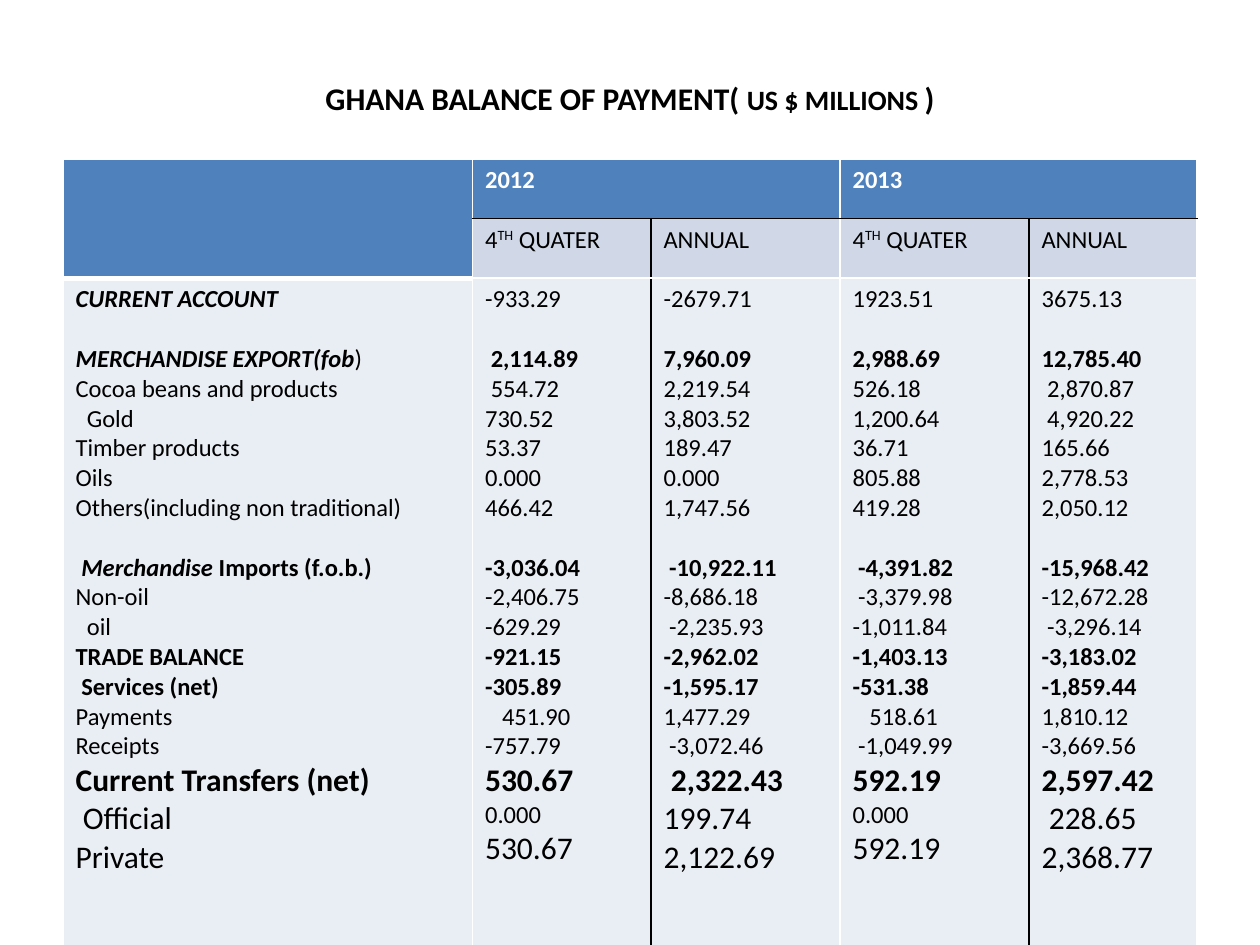
import dataclasses

import pptx
import pptx.dml.color
import pptx.enum.text
import pptx.oxml
import pptx.oxml.ns
import pptx.util

Pt = pptx.util.Pt


@dataclasses.dataclass(frozen=True)
class Theme:
    font: str = "Calibri"
    title_size: int = 18
    unit_size: int = 16
    body_size: int = 14
    large_size: int = 18
    space_width: float = 0.23  # width of one space, in ems
    group_gap: int = 17
    black: str = "000000"
    white: str = "FFFFFF"
    header: str = "4F81BD"
    subheader: str = "D0D8E8"
    body: str = "E9EDF4"


THEME = Theme()
BODY, LARGE = THEME.body_size, THEME.large_size


@dataclasses.dataclass(frozen=True)
class Entry:
    """One line in a body column; indent counts spaces."""
    text: str
    indent: int = 0


@dataclasses.dataclass(frozen=True)
class Account:
    """One account: its label, its four figures and their format."""
    label: object
    figures: tuple
    bold: bool = False
    sizes: tuple = (BODY,) * 5
    starts_group: bool = False
    italic_part: str = ""
    plain_part: str = ""
    label_bold: bool = False


def indented(text, indent=1):
    return Entry(text, indent)


ALL_LARGE = (LARGE,) * 5

ACCOUNTS = [
    Account("", ("-933.29", "-2679.71", "1923.51", "3675.13"),
            italic_part="CURRENT ACCOUNT", label_bold=True),
    Account("", (indented("2,114.89"), "7,960.09", "2,988.69", "12,785.40"),
            bold=True, starts_group=True,
            italic_part="MERCHANDISE EXPORT(fob", plain_part=")"),
    Account("Cocoa beans and products",
            (indented("554.72"), "2,219.54", "526.18", indented("2,870.87"))),
    Account(indented("Gold", 2),
            ("730.52", "3,803.52", "1,200.64", indented("4,920.22"))),
    Account("Timber products", ("53.37", "189.47", "36.71", "165.66")),
    Account("Oils", ("0.000", "0.000", "805.88", "2,778.53")),
    Account("Others(including non traditional)",
            ("466.42", "1,747.56", "419.28", "2,050.12")),
    Account(indented(" Imports (f.o.b.)"),
            ("-3,036.04", indented("-10,922.11"), indented("-4,391.82"), "-15,968.42"),
            bold=True, starts_group=True, italic_part="Merchandise"),
    Account("Non-oil",
            ("-2,406.75", "-8,686.18", indented("-3,379.98"), "-12,672.28")),
    Account(indented("oil", 2),
            ("-629.29", indented("-2,235.93"), "-1,011.84", indented("-3,296.14"))),
    Account("TRADE BALANCE",
            ("-921.15", "-2,962.02", "-1,403.13", "-3,183.02"), bold=True),
    Account(indented("Services (net)"),
            ("-305.89", "-1,595.17", "-531.38", "-1,859.44"), bold=True),
    Account("Payments",
            (indented("451.90", 3), "1,477.29", indented("518.61", 3), "1,810.12")),
    Account("Receipts",
            ("-757.79", indented("-3,072.46"), indented("-1,049.99"), "-3,669.56")),
    Account("Current Transfers (net)",
            ("530.67", indented("2,322.43"), "592.19", "2,597.42"),
            bold=True, sizes=ALL_LARGE),
    Account(indented("Official"), ("0.000", "199.74", "0.000", indented("228.65")),
            sizes=(LARGE, BODY, LARGE, BODY, LARGE)),
    Account("Private", ("530.67", "2,122.69", "592.19", "2,368.77"),
            sizes=ALL_LARGE),
]


def add_text(paragraph, text, size=BODY, color=THEME.black, bold=False,
             italic=False, superscript=False):
    run = paragraph.add_run()
    run.text = text
    font = run.font
    font.name, font.size, font.bold, font.italic = THEME.font, Pt(size), bold, italic
    font.color.rgb = pptx.dml.color.RGBColor.from_string(color)
    if superscript:
        run._r.get_or_add_rPr().set("baseline", "30000")


def set_border(cell, side, color, width=1):
    """Draw one cell edge; side is L, R, T or B."""
    line = pptx.oxml.parse_xml(
        f'<a:ln{side} {pptx.oxml.ns.nsdecls("a")} w="{Pt(width)}">'
        f'<a:solidFill><a:srgbClr val="{color}"/></a:solidFill></a:ln{side}>')
    properties = cell._tc.get_or_add_tcPr()
    position = sum(child.tag.split("}")[1].startswith("ln") for child in properties)
    properties.insert(position, line)


def add_title(slide):
    title = slide.shapes.title
    title.left, title.top, title.width, title.height = Pt(36), Pt(21.6), Pt(648), Pt(90)
    frame = title.text_frame
    frame.vertical_anchor = pptx.enum.text.MSO_ANCHOR.MIDDLE
    frame.margin_bottom = Pt(25)
    paragraph = frame.paragraphs[0]
    paragraph.alignment = pptx.enum.text.PP_ALIGN.CENTER
    add_text(paragraph, "GHANA BALANCE OF PAYMENT( ", size=THEME.title_size, bold=True)
    add_text(paragraph, "US $ MILLIONS ", size=THEME.unit_size, bold=True)
    add_text(paragraph, ")", size=THEME.title_size, bold=True)


def style_cells(table):
    """Fill the cells; black lines part quarter from annual and underline years."""
    for row in range(3):
        for column in range(5):
            cell = table.cell(row, column)
            is_header = row == 0 or (row == 1 and column == 0)
            fill = THEME.header if is_header else (THEME.subheader, THEME.body)[row - 1]
            cell.fill.solid()
            cell.fill.fore_color.rgb = pptx.dml.color.RGBColor.from_string(fill)
            split = row > 0
            edges = {
                "L": split and column in (2, 4),
                "R": split and column in (1, 3),
                "T": row == 1 and column > 0,
                "B": row == 0 and column > 0,
            }
            for side, is_black in edges.items():
                thick = side == "B" and row < 2 and column == 0
                set_border(cell, side, THEME.black if is_black else THEME.white,
                           3 if thick else 1)


def fill_headers(table):
    for column, year in ((1, "2012"), (3, "2013")):
        add_text(table.cell(0, column).text_frame.paragraphs[0], year,
                 color=THEME.white, bold=True)
        quarter = table.cell(1, column).text_frame.paragraphs[0]
        add_text(quarter, "4")
        add_text(quarter, "TH", superscript=True)
        add_text(quarter, " QUATER")
        add_text(table.cell(1, column + 1).text_frame.paragraphs[0], "ANNUAL")


def fill_column(cell, column):
    """Write one line per account into a body cell."""
    frame = cell.text_frame
    for index, account in enumerate(ACCOUNTS):
        paragraph = frame.add_paragraph() if index else frame.paragraphs[0]
        if account.starts_group:
            paragraph.space_before = Pt(THEME.group_gap)
        content = (account.label, *account.figures)[column]
        entry = content if isinstance(content, Entry) else Entry(content)
        size = account.sizes[column]
        if entry.indent:
            indent = Pt(round(entry.indent * size * THEME.space_width, 2))
            paragraph._p.get_or_add_pPr().set("marL", str(indent))
        if column == 0 and account.italic_part:
            add_text(paragraph, account.italic_part, size=size, bold=True, italic=True)
        if entry.text:
            bold = account.bold or (column == 0 and account.label_bold)
            add_text(paragraph, entry.text, size=size, bold=bold)
        if column == 0 and account.plain_part:
            add_text(paragraph, account.plain_part, size=size)


def add_balance_table(slide):
    widths, heights = (234, 102, 108, 108, 96), (34, 34, 407)
    table = slide.shapes.add_table(3, 5, Pt(36), Pt(91), Pt(sum(widths)),
                                   Pt(sum(heights))).table
    for column, width in zip(table.columns, widths):
        column.width = Pt(width)
    for row, height in zip(table.rows, heights):
        row.height = Pt(height)
    style_cells(table)
    # Account heading spans both header rows; each year spans two columns
    for first, last in (((0, 0), (1, 0)), ((0, 1), (0, 2)), ((0, 3), (0, 4))):
        table.cell(*first).merge(table.cell(*last))
    fill_headers(table)
    for column in range(5):
        fill_column(table.cell(2, column), column)


def main():
    presentation = pptx.Presentation()
    presentation.slide_width, presentation.slide_height = Pt(720), Pt(540)
    slide = presentation.slides.add_slide(presentation.slide_layouts[5])
    add_title(slide)
    add_balance_table(slide)
    presentation.save("out.pptx")


if __name__ == "__main__":
    main()
